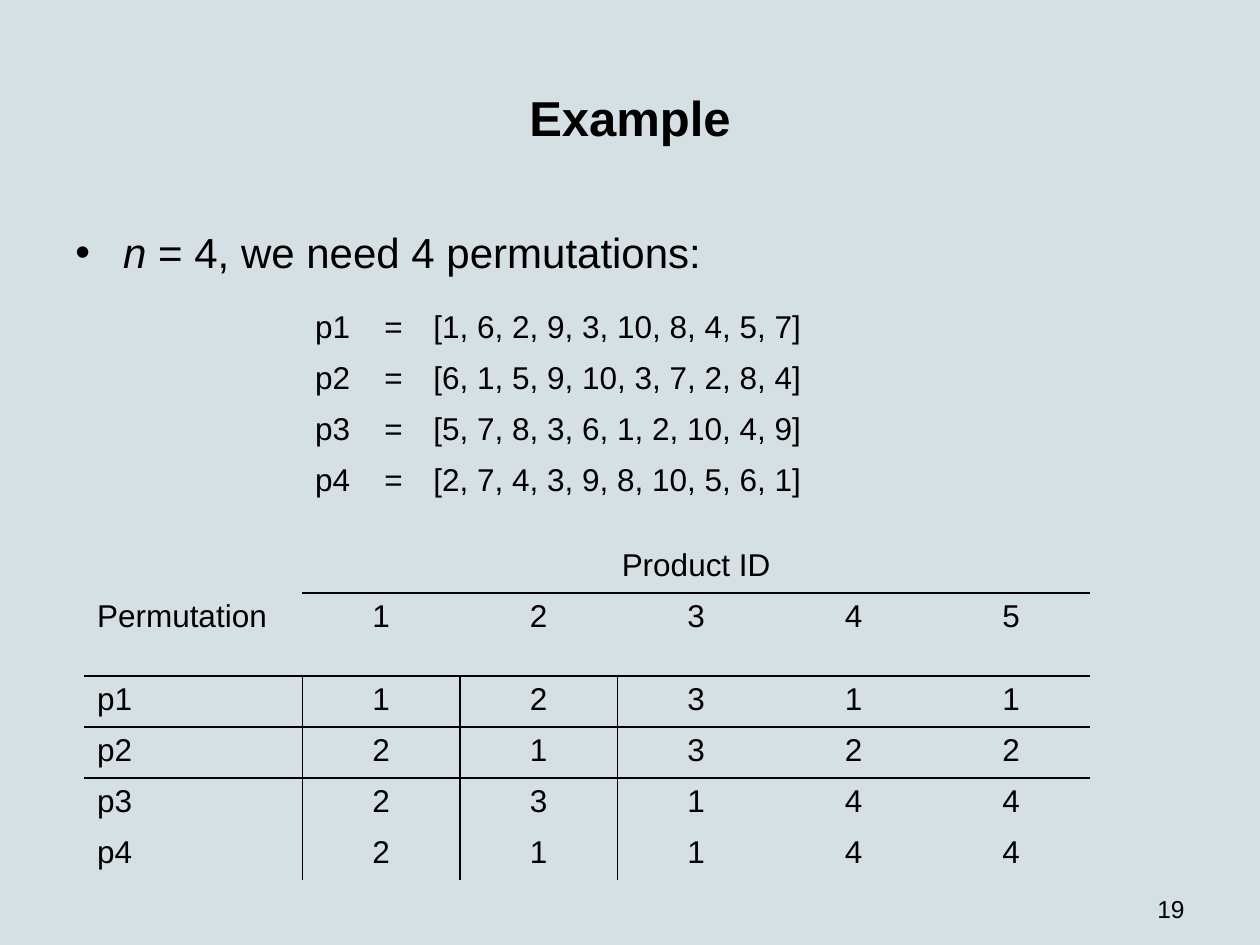
from dataclasses import dataclass

from lxml.etree import SubElement
from pptx import Presentation
from pptx.dml.color import RGBColor
from pptx.enum.text import MSO_ANCHOR as Anchor, PP_ALIGN as Align
from pptx.oxml.ns import qn
from pptx.util import Inches, Pt


@dataclass(frozen=True)
class Theme:
    font: str = "Arial"
    ink: str = "000000"
    back: str = "D5E0E5"
    title: int = 28
    body: int = 24
    cell: int = 18
    number: int = 14
    rule: int = 1


@dataclass(frozen=True)
class Box:
    left: float
    top: float
    width: float
    height: float

    def lengths(self) -> tuple:
        return tuple(Inches(v) for v in (self.left, self.top, self.width, self.height))


@dataclass(frozen=True)
class Grid:
    box: Box
    cols: tuple
    rows: tuple
    data: tuple
    centred_from: int
    ruled: bool = False


THEME = Theme()
NO_STYLE = "{2D5ABB26-0587-4C30-8999-92F81FD0307C}"
ROW = 0.405

PERMUTATIONS = Grid(
    Box(2.4, 2.41, 6.67, 4 * ROW),
    (0.55, 0.39, 5.72),
    (ROW,) * 4,
    (
        ("p1", "=", "[1, 6, 2, 9, 3, 10, 8, 4, 5, 7]"),
        ("p2", "=", "[6, 1, 5, 9, 10, 3, 7, 2, 8, 4]"),
        ("p3", "=", "[5, 7, 8, 3, 6, 1, 2, 10, 4, 9]"),
        ("p4", "=", "[2, 7, 4, 3, 9, 8, 10, 5, 6, 1]"),
    ),
    centred_from=3,
)
SIGNATURES = Grid(
    Box(0.67, 4.3, 7.98, 5 * ROW + 0.66),
    (1.73,) + (1.25,) * 5,
    (ROW, 0.66) + (ROW,) * 4,
    (
        ("", "", "Product ID", "", "", ""),
        ("Permutation", "1", "2", "3", "4", "5"),
        ("p1", "1", "2", "3", "1", "1"),
        ("p2", "2", "1", "3", "2", "2"),
        ("p3", "2", "3", "1", "4", "4"),
        ("p4", "2", "1", "1", "4", "4"),
    ),
    centred_from=1,
    ruled=True,
)


def add_run(p, text: str, size: int, **extra) -> None:
    r = p.add_run()
    r.text = text
    values = {"name": THEME.font, "size": Pt(size), **extra}
    for name, value in values.items():
        setattr(r.font, name, value)
    r.font.color.rgb = RGBColor.from_string(THEME.ink)


def add_textbox(s, box: Box):
    tf = s.shapes.add_textbox(*box.lengths()).text_frame
    tf.word_wrap = True
    return tf.paragraphs[0]


def rule_below(row: int, col: int) -> bool:
    return row in (1, 2) or (row == 0 and col >= 1)


def rule_right(row: int, col: int) -> bool:
    return row >= 2 and col in (0, 1)


def add_rules(cell, row: int, col: int) -> None:
    sides = {
        "a:lnL": rule_right(row, col - 1),
        "a:lnR": rule_right(row, col),
        "a:lnT": rule_below(row - 1, col),
        "a:lnB": rule_below(row, col),
    }
    tc_pr = cell._tc.get_or_add_tcPr()
    for tag in (tag for tag, shown in sides.items() if shown):
        ln = SubElement(tc_pr, qn(tag), w=str(Pt(THEME.rule)))
        fill = SubElement(ln, qn("a:solidFill"))
        SubElement(fill, qn("a:srgbClr"), val=THEME.ink)


def add_grid(s, grid: Grid) -> None:
    table = s.shapes.add_table(len(grid.rows), len(grid.cols), *grid.box.lengths()).table
    table.first_row = table.horz_banding = False
    table._tbl.tblPr.find(qn("a:tableStyleId")).text = NO_STYLE
    for column, width in zip(table.columns, grid.cols):
        column.width = Inches(width)
    for i, (row, height) in enumerate(zip(table.rows, grid.rows)):
        row.height = Inches(height)
        for j, text in enumerate(grid.data[i]):
            cell = table.cell(i, j)
            p = cell.text_frame.paragraphs[0]
            p.alignment = Align.CENTER if j >= grid.centred_from else Align.LEFT
            if text:
                add_run(p, text, THEME.cell)
            if grid.ruled:
                add_rules(cell, i, j)
            cell.fill.background()
    if grid.ruled:
        table.cell(0, 2).merge(table.cell(0, 4))


def add_title(s, text: str, box: Box) -> None:
    sp = s.shapes.title
    for name, value in zip(("left", "top", "width", "height"), box.lengths()):
        setattr(sp, name, value)
    tf = sp.text_frame
    tf.vertical_anchor = Anchor.MIDDLE
    p = tf.paragraphs[0]
    p.alignment = Align.CENTER
    add_run(p, text, THEME.title, bold=True)


def add_statement(s, box: Box) -> None:
    p = add_textbox(s, box)
    p.space_before = p.space_after = Pt(THEME.body / 10)
    p_pr = p._p.get_or_add_pPr()
    for name, value in {"marL": 0.38, "indent": -0.38}.items():
        p_pr.set(name, str(Inches(value)))
    SubElement(p_pr, qn("a:buFont"), typeface=THEME.font)
    SubElement(p_pr, qn("a:buChar"), char="•")
    add_run(p, "n", THEME.body, italic=True)
    add_run(p, " = 4, we need 4 permutations:", THEME.body)


def add_number(s, text: str, box: Box) -> None:
    p = add_textbox(s, box)
    p.alignment = Align.RIGHT
    add_run(p, text, THEME.number)


def main() -> None:
    prs = Presentation()
    prs.slide_width, prs.slide_height = Inches(10), Inches(7.5)
    s = prs.slides.add_slide(prs.slide_layouts[5])
    fill = s.background.fill
    fill.solid()
    fill.fore_color.rgb = RGBColor.from_string(THEME.back)
    add_title(s, "Example", Box(0.5, 0.3, 9, 1.25))
    add_statement(s, Box(0.5, 1.75, 9, 0.6))
    add_number(s, "19", Box(7.17, 7.05, 2.33, 0.3))
    for grid in (PERMUTATIONS, SIGNATURES):
        add_grid(s, grid)
    prs.save("out.pptx")


if __name__ == "__main__":
    main()
